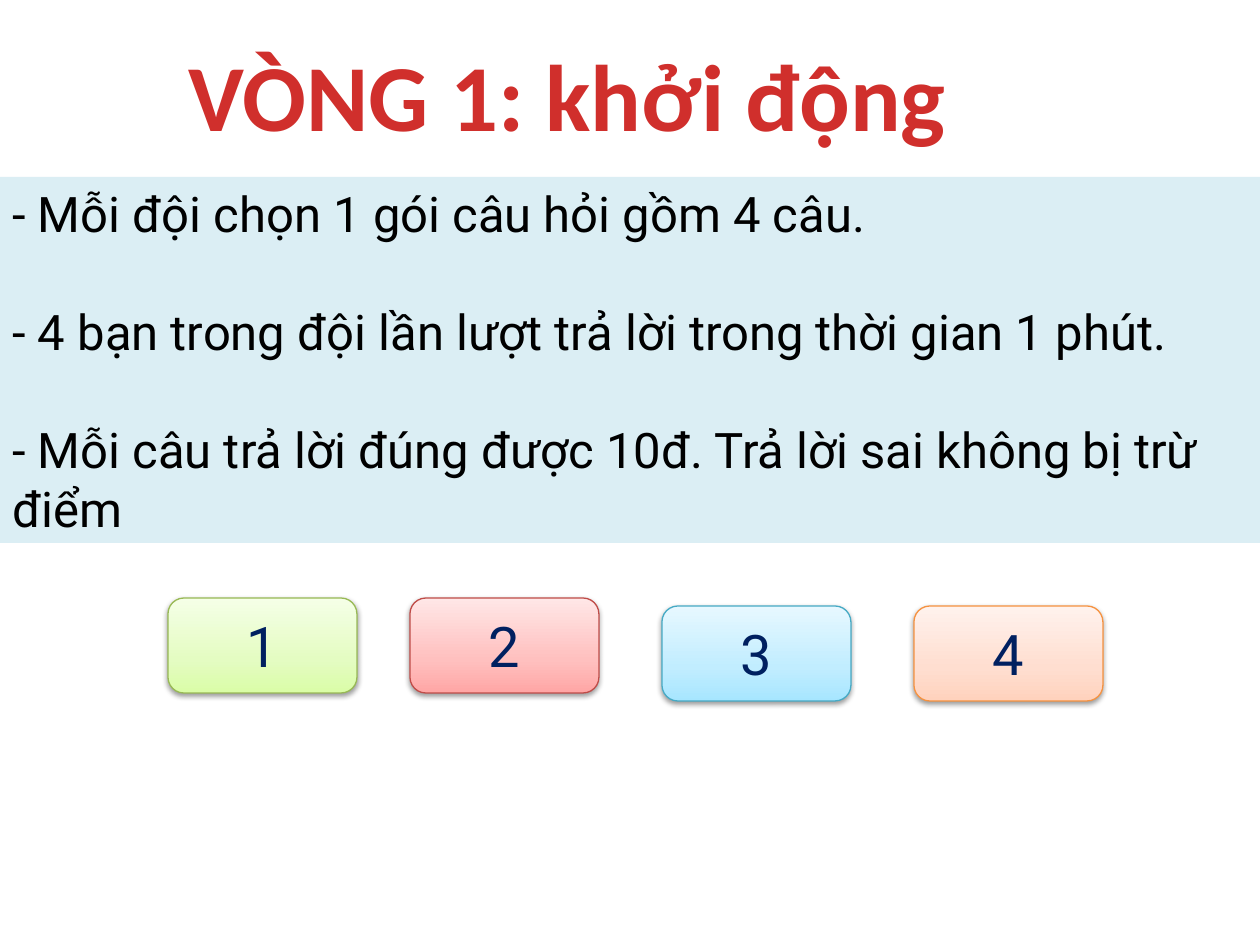
from lxml import etree
from pptx import Presentation
from pptx.dml.color import RGBColor
from pptx.enum.shapes import MSO_SHAPE
from pptx.enum.text import MSO_ANCHOR, MSO_AUTO_SIZE, PP_ALIGN
from pptx.oxml.ns import qn
from pptx.util import Emu, Pt

RECT, ROUNDED = MSO_SHAPE.RECTANGLE, MSO_SHAPE.ROUNDED_RECTANGLE
LEFT, CENTER = PP_ALIGN.LEFT, PP_ALIGN.CENTER
TOP, MIDDLE = MSO_ANCHOR.TOP, MSO_ANCHOR.MIDDLE
GROW = MSO_AUTO_SIZE.SHAPE_TO_FIT_TEXT

PX = 914400 / 126
BLACK = RGBColor(0x00, 0x00, 0x00)
NAVY = RGBColor(0x00, 0x20, 0x60)
PALE_BLUE = RGBColor(0xDB, 0xEE, 0xF4)
TITLE_REDS = [(0, RGBColor(0xFC, 0x7C, 0x7A)), (75, RGBColor(0xD0, 0x2F, 0x2C)),
              (100, RGBColor(0xC7, 0x05, 0x00))]
GREEN_LINE = RGBColor(0x98, 0xB9, 0x55)
GREENS = [(0, RGBColor(0xDA, 0xFD, 0xA7)), (35, RGBColor(0xE4, 0xFC, 0xC2)),
          (100, RGBColor(0xF5, 0xFF, 0xE7))]
RED_LINE = RGBColor(0xBF, 0x4C, 0x48)
REDS = [(0, RGBColor(0xFF, 0xA6, 0xA5)), (35, RGBColor(0xFF, 0xC0, 0xBF)),
        (100, RGBColor(0xFF, 0xE7, 0xE7))]
BLUE_LINE = RGBColor(0x46, 0xAA, 0xC5)
BLUES = [(0, RGBColor(0xA7, 0xE6, 0xFF)), (35, RGBColor(0xC1, 0xED, 0xFF)),
         (100, RGBColor(0xE7, 0xF8, 0xFF))]
ORANGE_LINE = RGBColor(0xF6, 0x92, 0x40)
ORANGES = [(0, RGBColor(0xFF, 0xD2, 0xBD)), (35, RGBColor(0xFF, 0xDE, 0xD0)),
           (100, RGBColor(0xFF, 0xF2, 0xED))]

RULES = [
    "- Mỗi đội chọn 1 gói câu hỏi gồm 4 câu.",
    "- 4 bạn trong đội lần lượt trả lời trong thời gian 1 phút.",
    "- Mỗi câu trả lời đúng được 10đ. Trả lời sai không bị trừ điểm",
]
# left, top, outline, gradient of each question pack
PACKS = [
    (168, 598, GREEN_LINE, GREENS),
    (410, 598, RED_LINE, REDS),
    (662, 606, BLUE_LINE, BLUES),
    (914, 606, ORANGE_LINE, ORANGES),
]


def px(*lengths):
    return [Emu(round(length * PX)) for length in lengths]


def add_node(parent, tag, **attributes):
    return etree.SubElement(parent, qn(tag), {k: str(v) for k, v in attributes.items()})


def paint_gradient(fill, element, stops, angle):
    """Give fill, the only gradient within element, its stops; angle is counter-clockwise."""
    fill.gradient()
    fill.gradient_angle = angle
    stop_list = element.find(".//" + qn("a:gsLst"))
    stop_list.clear()
    for percent, color in stops:
        stop = add_node(stop_list, "a:gs", pos=percent * 1000)
        add_node(stop, "a:srgbClr", val=color)


def write_text(shape, paragraphs, size, font="Roboto", color=BLACK, bold=False,
               align=LEFT, anchor=TOP, wrap=True, gap=0):
    """Fill the shape with paragraphs, gap points apart, and return the runs."""
    frame = shape.text_frame
    frame.word_wrap = wrap
    frame.vertical_anchor = anchor
    runs = []
    for index, text in enumerate(paragraphs):
        paragraph = frame.add_paragraph() if index else frame.paragraphs[0]
        paragraph.alignment = align
        if index:
            paragraph.space_before = Pt(gap)
        run = paragraph.add_run()
        run.text = text
        run.font.name, run.font.size, run.font.bold = font, Pt(size), bold
        run.font.color.rgb = color
        runs.append(run)
    return runs


class SlideBuilder:
    def __init__(self, slide):
        self.shapes = slide.shapes

    def title(self, text, *box):
        title = self.shapes.add_textbox(*px(*box))
        run, = write_text(title, [text], 54, font="Calibri", bold=True,
                          align=CENTER, wrap=False)
        title.text_frame.auto_size = GROW
        paint_gradient(run.font.fill, title.element, TITLE_REDS, 270)

    def rules_panel(self, rules, *box):
        panel = self.shapes.add_shape(RECT, *px(*box))
        panel.shadow.inherit = False
        panel.fill.solid()
        panel.fill.fore_color.rgb = PALE_BLUE
        panel.line.fill.background()
        write_text(panel, rules, 28, gap=34)
        panel.text_frame.auto_size = GROW

    def pack_button(self, label, left, top, outline, stops):
        button = self.shapes.add_shape(ROUNDED, *px(left, top, 189, 95))
        paint_gradient(button.fill, button.element, stops, 90)
        button.line.color.rgb = outline
        button.line.width = Pt(0.75)
        self.drop_shadow(button)
        write_text(button, [label], 32, color=NAVY, align=CENTER, anchor=MIDDLE)

    def drop_shadow(self, shape):
        shape.shadow.inherit = False
        effects = shape.element.find(".//" + qn("a:effectLst"))
        shadow = add_node(effects, "a:outerShdw", blurRad=Pt(3.1), dist=Pt(1.6),
                          dir=90 * 60000, rotWithShape=0)
        color = add_node(shadow, "a:srgbClr", val=BLACK)
        add_node(color, "a:alpha", val=38000)


def main():
    presentation = Presentation()
    presentation.slide_width, presentation.slide_height = px(1260, 945)
    builder = SlideBuilder(presentation.slides.add_slide(presentation.slide_layouts[6]))
    builder.title("VÒNG 1: khởi động", 165, 31, 805, 127)
    builder.rules_panel(RULES, 0, 177, 1260, 366)
    for number, pack in enumerate(PACKS, start=1):
        builder.pack_button(str(number), *pack)
    presentation.save("out.pptx")


if __name__ == "__main__":
    main()
